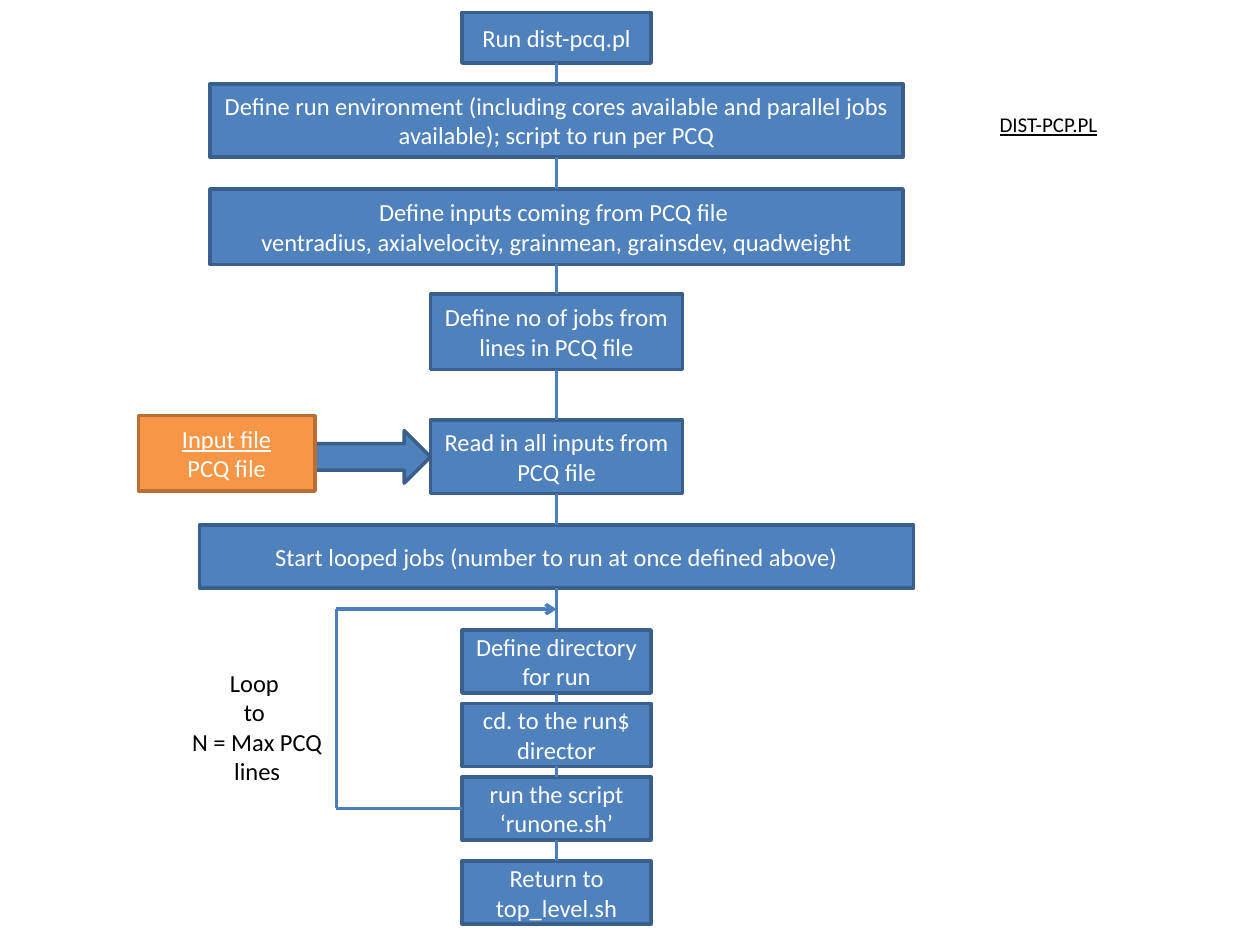
from itertools import pairwise

from lxml.etree import SubElement
from pptx import Presentation
from pptx.dml.color import RGBColor
from pptx.enum.shapes import MSO_CONNECTOR as Connector, MSO_SHAPE as Shape
from pptx.enum.text import MSO_ANCHOR as Anchor, MSO_AUTO_SIZE as AutoSize, PP_ALIGN as Align
from pptx.oxml.ns import qn
from pptx.util import Cm, Pt

BLUE, BLUE_EDGE, LINK = "4F81BD", "3A5F8C", "4B7EBC"
ORANGE, ORANGE_EDGE = "F79646", "B76F34"
WHITE, BLACK = "FFFFFF", "000000"
NARROW, MEDIUM, WIDE, WIDEST = 3.81, 5.08, 13.97, 14.39

# Flow steps, all centred on one axis: top, width, height, paragraphs (cm)
AXIS = 11.22
STEPS = [
    (0.25, NARROW, 1.02, ["Run dist-pcq.pl"]),
    (1.69, WIDE, 1.48, ["Define run environment (including cores available and "
                        "parallel jobs available); script to run per PCQ"]),
    (3.81, WIDE, 1.52, ["Define inputs coming from PCQ file ",
                        "ventradius, axialvelocity, grainmean, grainsdev, quadweight"]),
    (5.93, MEDIUM, 1.52, ["Define no of jobs from lines in PCQ file"]),
    (8.47, MEDIUM, 1.48, ["Read in all inputs from PCQ file"]),
    (10.58, WIDEST, 1.27, ["Start looped jobs (number to run at once defined above)"]),
    (12.7, NARROW, 1.27, ["Define directory for run"]),
    (14.18, NARROW, 1.27, ["cd. to the run$ director"]),
    (15.66, NARROW, 1.27, ["run the script ‘runone.sh’"]),
    (17.36, NARROW, 1.27, ["Return to top_level.sh"]),
]
READ_STEP, SCRIPT_STEP = STEPS[4], STEPS[8]
INPUT_BOX = (2.79, 8.38, 3.56, 1.52)
INPUT_TEXT = ["Input file", "PCQ file"]
ARROW_THICKNESS = 1.06
LOOP_LEFT, LOOP_TOP = 6.78, 12.28
LOOP_LABEL_BOX = (3.61, 13.34, 3.15, 2.63)
LOOP_LABEL = ["Loop ", "to ", "N = Max PCQ", "lines"]
TITLE_BOX = (19.9, 2.12, 2.54, 0.77)
TITLE = ["DIST-PCP.PL"]


def rgb(color):
    return RGBColor.from_string(color)


def write(frame, lines, color, size=14, align=Align.CENTER, underline_first=False):
    for index, line in enumerate(lines):
        paragraph = frame.add_paragraph() if index else frame.paragraphs[0]
        paragraph.alignment = align
        run = paragraph.add_run()
        run.text = line
        run.font.name = "Calibri"
        run.font.size = Pt(size)
        run.font.color.rgb = rgb(color)
        if underline_first and index == 0:
            run.font.underline = True


def add_shape(slide, kind, box, fill=BLUE, edge=BLUE_EDGE):
    shape = slide.shapes.add_shape(kind, *map(Cm, box))
    shape.shadow.inherit = False
    shape.fill.solid()
    shape.fill.fore_color.rgb = rgb(fill)
    shape.line.color.rgb = rgb(edge)
    shape.line.width = Pt(2)
    return shape


def add_process(slide, box, lines, underline_first=False, **colors):
    shape = add_shape(slide, Shape.FLOWCHART_PROCESS, box, **colors)
    frame = shape.text_frame
    frame.word_wrap = True
    frame.vertical_anchor = Anchor.MIDDLE
    write(frame, lines, WHITE, underline_first=underline_first)


def add_label(slide, box, lines, **style):
    frame = slide.shapes.add_textbox(*map(Cm, box)).text_frame
    frame.word_wrap = False
    frame.auto_size = AutoSize.SHAPE_TO_FIT_TEXT
    write(frame, lines, BLACK, **style)


def add_link(slide, start, end, arrowhead=False):
    link = slide.shapes.add_connector(Connector.STRAIGHT, *map(Cm, (*start, *end)))
    link.line.color.rgb = rgb(LINK)
    link.line.width = Pt(2)
    properties = link._element.spPr
    if arrowhead:
        SubElement(properties.find(qn("a:ln")), qn("a:tailEnd"), type="arrow")
    SubElement(properties, qn("a:effectLst"))


def step_left(step):
    return AXIS - step[1] / 2


def step_middle(step):
    return step[0] + step[2] / 2


def add_input(slide):
    """Input file box and the block arrow from it to the reading step."""
    start = INPUT_BOX[0] + INPUT_BOX[2]
    end = step_left(READ_STEP)
    length = end - start
    arrow_box = ((start + end - ARROW_THICKNESS) / 2, step_middle(READ_STEP) - length / 2,
                 ARROW_THICKNESS, length)
    add_shape(slide, Shape.DOWN_ARROW, arrow_box).rotation = 270
    add_process(slide, INPUT_BOX, INPUT_TEXT, underline_first=True,
                fill=ORANGE, edge=ORANGE_EDGE)


def add_loop(slide):
    bottom = step_middle(SCRIPT_STEP)
    corner = (LOOP_LEFT, LOOP_TOP)
    add_link(slide, corner, (AXIS, LOOP_TOP), arrowhead=True)
    add_link(slide, corner, (LOOP_LEFT, bottom))
    add_link(slide, (LOOP_LEFT, bottom), (step_left(SCRIPT_STEP), bottom))
    add_label(slide, LOOP_LABEL_BOX, LOOP_LABEL)


def main():
    presentation = Presentation()
    presentation.slide_width, presentation.slide_height = Cm(25.4), Cm(19.05)
    slide = presentation.slides.add_slide(presentation.slide_layouts[6])
    add_input(slide)
    for step in STEPS:
        top, width, height, lines = step
        add_process(slide, (step_left(step), top, width, height), lines)
    add_loop(slide)
    add_label(slide, TITLE_BOX, TITLE, size=12, align=Align.LEFT, underline_first=True)
    for upper, lower in pairwise(STEPS):
        add_link(slide, (AXIS, upper[0] + upper[2]), (AXIS, lower[0]))
    presentation.save("out.pptx")


if __name__ == "__main__":
    main()
